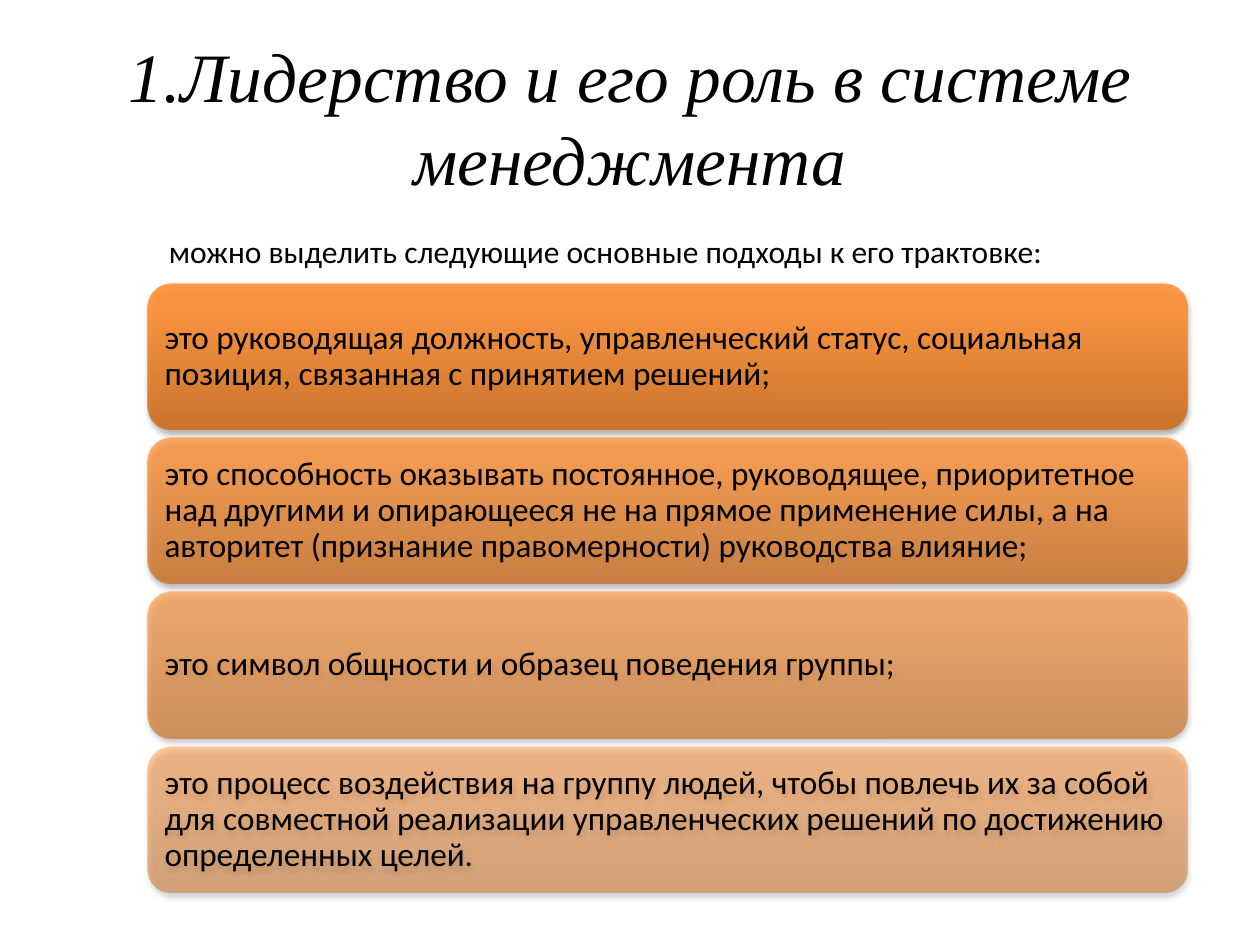
from lxml.etree import SubElement
from pptx import Presentation
from pptx.dml.color import RGBColor
from pptx.enum.shapes import MSO_SHAPE
from pptx.enum.text import MSO_ANCHOR, PP_ALIGN
from pptx.oxml.ns import qn
from pptx.util import Inches, Pt

TITLE = "1.Лидерство и его роль в системе менеджмента"
INTRODUCTION = "можно выделить следующие основные подходы к его трактовке:"
APPROACHES = [
    "это руководящая должность, управленческий статус, социальная позиция, связанная с принятием решений;",
    "это способность оказывать постоянное, руководящее, приоритетное над другими и опирающееся не на прямое применение силы, а на авторитет (признание правомерности) руководства влияние;",
    "это символ общности и образец поведения группы;",
    "это процесс воздействия на группу людей, чтобы повлечь их за собой для совместной реализации управленческих решений по достижению определенных целей.",
]
COLOURS = {"text": "000000", "dark": "CC6E20", "bright": "FF9034", "top": "FF9136"}
GRADIENT = [(0, "dark"), (80, "bright"), (100, "top")]
CARD_LEFT, CARD_TOP, CARD_WIDTH, CARD_HEIGHT = 1.17, 2.25, 8.25, 1.16
ROW_PITCH = 4.9 / len(APPROACHES)
FIRST_OPACITY, LAST_OPACITY = 90, 50


def place(shape, left, top, width, height):
    shape.left, shape.top = Inches(left), Inches(top)
    shape.width, shape.height = Inches(width), Inches(height)


def write(paragraph, text, font_name, size, alignment, italic=False):
    paragraph.alignment = alignment
    run = paragraph.add_run()
    run.text = text
    run.font.name = font_name
    run.font.size = Pt(size)
    run.font.italic = italic
    run.font.color.rgb = RGBColor.from_string(COLOURS["text"])


def add_colour(parent, colour, opacity):
    element = SubElement(parent, qn("a:srgbClr"), val=colour)
    SubElement(element, qn("a:alpha"), val=str(round(opacity * 1000)))


def fill_with_gradient(shape, opacity):
    shape.fill.gradient()
    shape.fill.gradient_angle = 90
    stops = shape._element.spPr.find(qn("a:gradFill")).find(qn("a:gsLst"))
    for stop in list(stops):
        stops.remove(stop)
    for position, colour in GRADIENT:
        stop = SubElement(stops, qn("a:gs"), pos=str(position * 1000))
        add_colour(stop, COLOURS[colour], opacity)


def add_shadow(shape):
    shape.shadow.inherit = False
    effects = shape._element.spPr.find(qn("a:effectLst"))
    shadow = SubElement(effects, qn("a:outerShdw"), blurRad=str(Pt(3.1)),
                        dist=str(Pt(1.8)), dir="5400000", rotWithShape="0")
    add_colour(shadow, COLOURS["text"], 35)


def add_card(slide, row, text):
    card = slide.shapes.add_shape(
        MSO_SHAPE.ROUNDED_RECTANGLE, Inches(CARD_LEFT), Inches(CARD_TOP + row * ROW_PITCH),
        Inches(CARD_WIDTH), Inches(CARD_HEIGHT))
    opacity_step = (FIRST_OPACITY - LAST_OPACITY) / (len(APPROACHES) - 1)
    fill_with_gradient(card, FIRST_OPACITY - row * opacity_step)
    card.line.fill.background()
    add_shadow(card)
    frame = card.text_frame
    frame.word_wrap = True
    frame.vertical_anchor = MSO_ANCHOR.MIDDLE
    frame.margin_left = frame.margin_right = Inches(0.08)
    frame.margin_top = frame.margin_bottom = Inches(0.08)
    paragraph = frame.paragraphs[0]
    paragraph.line_spacing = 0.9
    write(paragraph, text, "Calibri", 19, PP_ALIGN.LEFT)


def main():
    presentation = Presentation()
    presentation.slide_width, presentation.slide_height = Inches(10), Inches(7.5)
    slide = presentation.slides.add_slide(presentation.slide_layouts[1])

    title = slide.shapes.title
    place(title, 0.5, 0.3, 9, 1.25)
    title.text_frame.vertical_anchor = MSO_ANCHOR.MIDDLE
    write(title.text_frame.paragraphs[0], TITLE, "Times New Roman", 39.6, PP_ALIGN.CENTER, True)

    body = slide.placeholders[1]
    place(body, -0.17, 1.58, 9.92, 5.12)
    body.text_frame.margin_top = Inches(0.26)
    paragraph = body.text_frame.paragraphs[0]
    paragraph.space_before = Pt(0)
    write(paragraph, INTRODUCTION, "Calibri", 18, PP_ALIGN.JUSTIFY)
    properties = paragraph._p.get_or_add_pPr()
    properties.set("marL", str(Inches(1.41)))
    properties.set("indent", "0")
    SubElement(properties, qn("a:buNone"))

    for row, text in enumerate(APPROACHES):
        add_card(slide, row, text)

    presentation.save("out.pptx")


if __name__ == "__main__":
    main()
